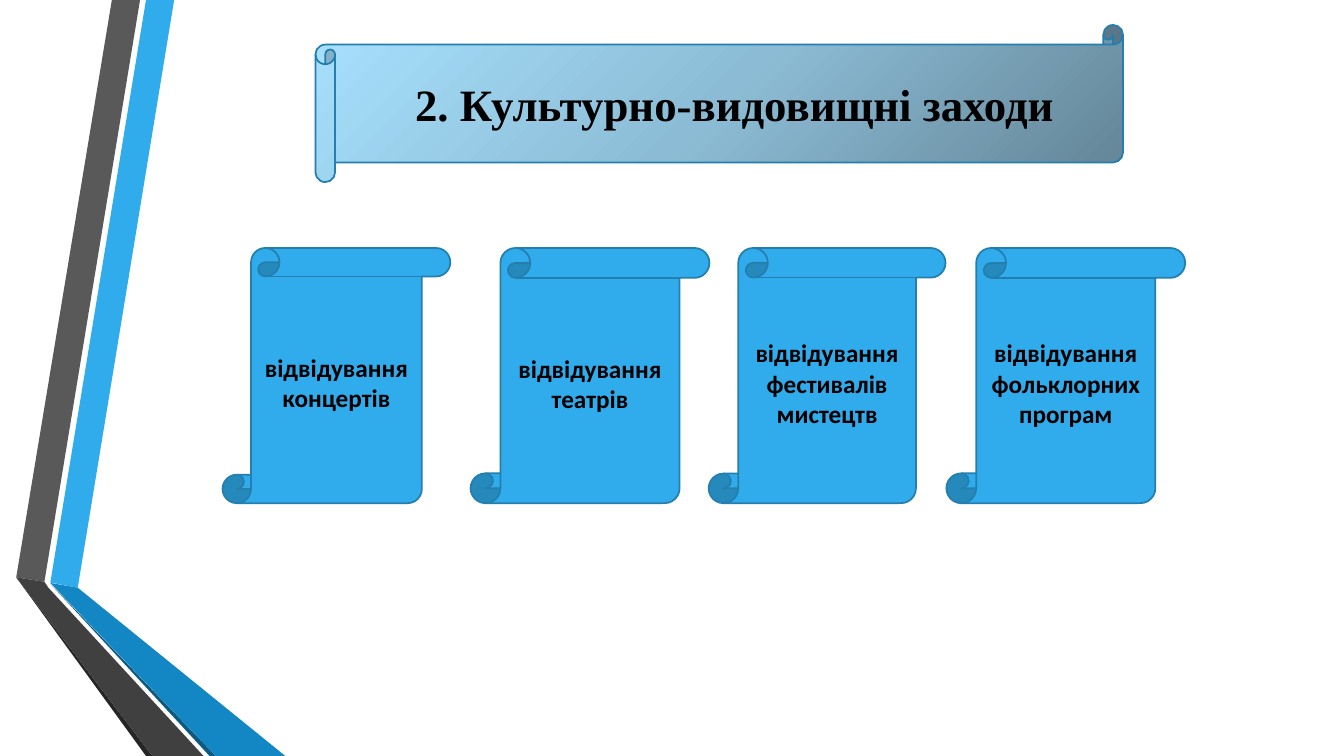
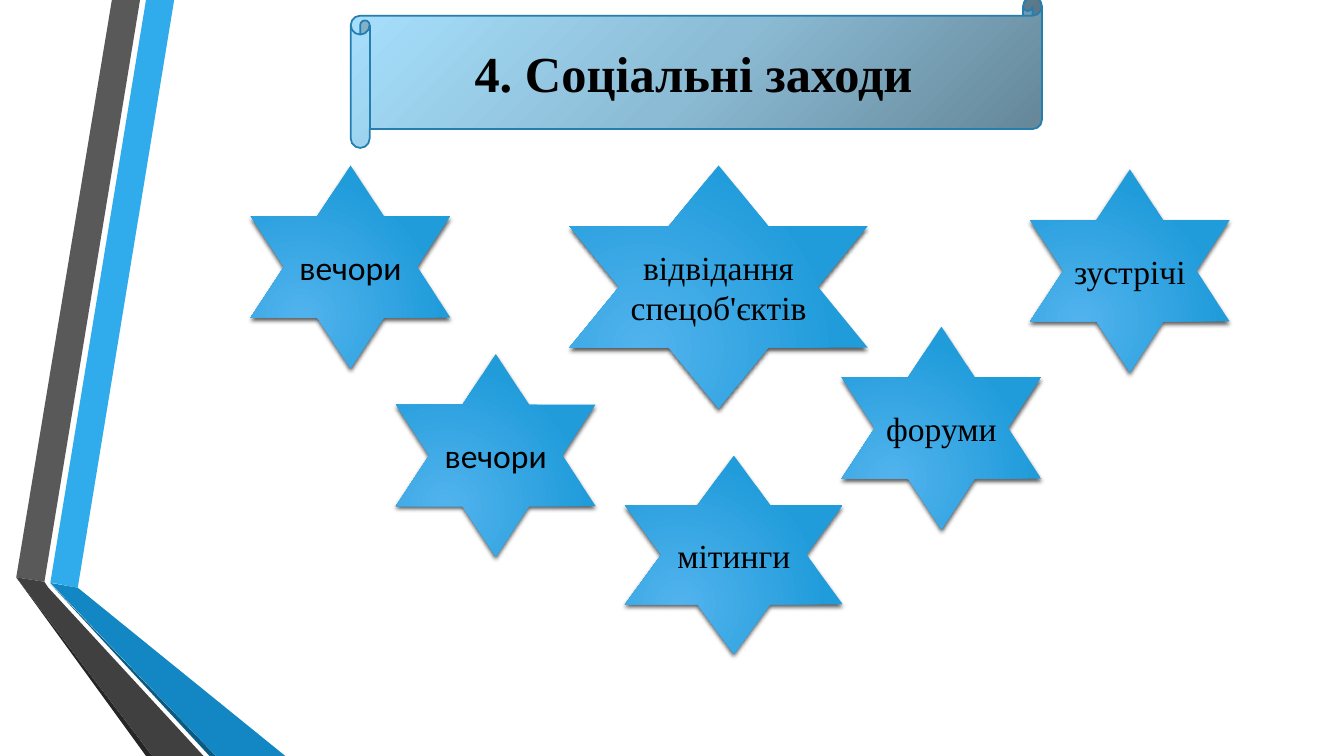
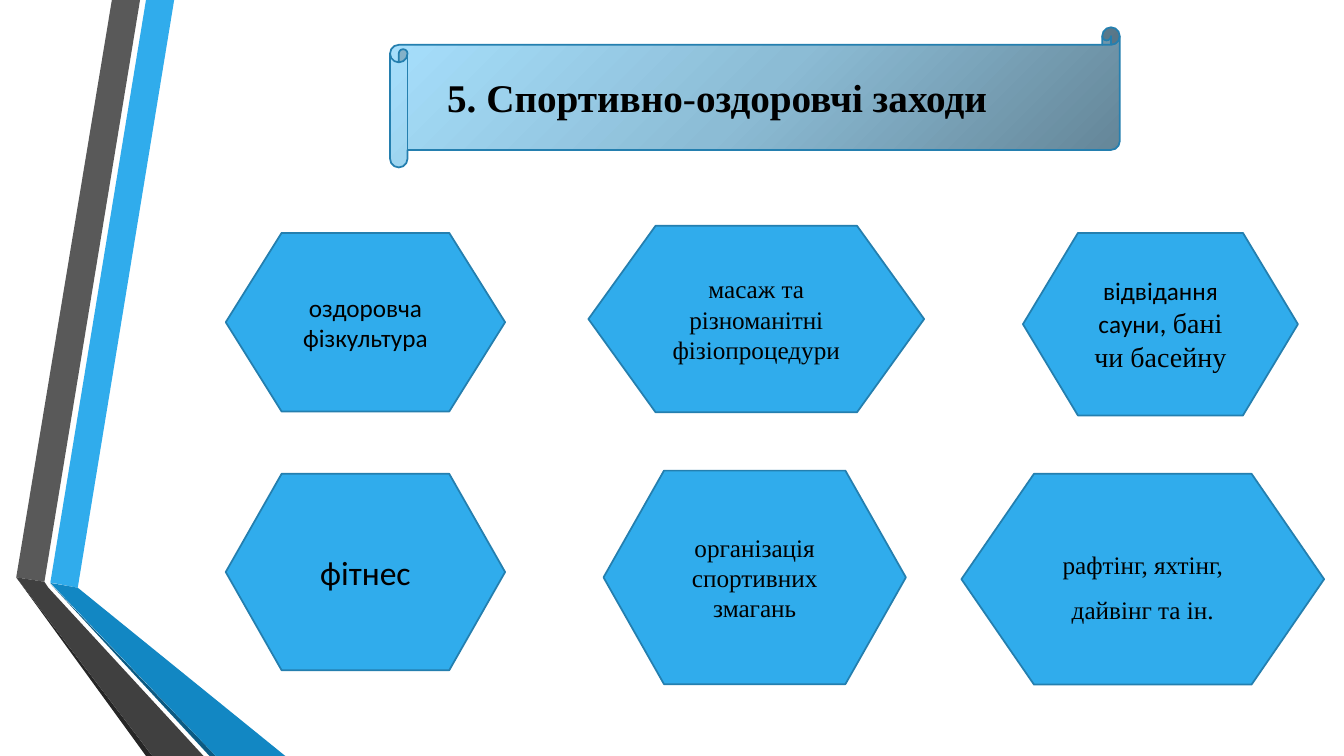
"""Builds three slides on cultural, social and sports activities."""
from pptx import Presentation
from pptx.dml.color import RGBColor
from pptx.enum import shapes, text
from pptx.oxml import ns, parse_xml
from pptx.util import Cm, Pt

BLACK = RGBColor(0x00, 0x00, 0x00)
BLUE = RGBColor(0x30, 0xAC, 0xEC)
OUTLINE = RGBColor(0x24, 0x7F, 0xAF)
TITLE_STOPS = (
    (0, RGBColor(0x63, 0x84, 0x96)),
    (50, RGBColor(0x8C, 0xBC, 0xD5)),
    (100, RGBColor(0xA7, 0xE0, 0xFD)),
)
STAR_STOPS = ((0, RGBColor(0x51, 0xB3, 0xED)), (100, RGBColor(0x21, 0x9C, 0xDB)))
LINEAR = '<a:lin ang="13500000" scaled="0"/>'
RADIAL = (
    '<a:path path="circle"><a:fillToRect l="50000" t="100000" '
    'r="100000" b="50000"/></a:path>'
)
SHADOW = (
    f'<a:outerShdw {ns.nsdecls("a")} blurRad="38100" dist="25400" dir="5400000" '
    'rotWithShape="0"><a:srgbClr val="000000"><a:alpha val="64000"/></a:srgbClr>'
    '</a:outerShdw>'
)
SANS = "Calibri"
SERIF = "Times New Roman"
SCROLL = shapes.MSO_SHAPE.VERTICAL_SCROLL
STAR = shapes.MSO_SHAPE.STAR_6_POINT
HEXAGON = shapes.MSO_SHAPE.FLOWCHART_PREPARATION

RIBBONS = (
    (BLUE, ((1.27, 14.68), (1.96, 14.81), (4.39, 0), (3.68, 0))),
    (RGBColor(0x59, 0x59, 0x59),
     ((3.53, 0), (2.82, 0), (0.41, 14.55), (1.12, 14.66))),
    (RGBColor(0x26, 0x26, 0x26), ((0.41, 14.55), (3.68, 19.05), (3.84, 19.05))),
    (RGBColor(0x0C, 0x5A, 0x82), ((1.27, 14.71), (5.28, 19.05), (5.44, 19.05))),
    (RGBColor(0x12, 0x87, 0xC3),
     ((1.27, 14.69), (5.44, 19.05), (7.19, 19.05), (1.96, 14.81))),
    (RGBColor(0x40, 0x40, 0x40),
     ((5.13, 19.05), (1.22, 14.81), (1.12, 14.66), (0.41, 14.55), (3.84, 19.05))),
)

CULTURE_SCROLLS = (
    (5.61, 5.74, "відвідування концертів"),
    (11.86, 6.02, "відвідування театрів"),
    (17.86, 5.97, "відвідування фестивалів мистецтв"),
    (23.85, 6.02, "відвідування фольклорних програм"),
)
STAR_SIZE = (5.03, 5.11)
SOCIAL_STARS = (
    ((6.32, 4.17, *STAR_SIZE), "вечори", SANS),
    ((9.98, 8.92, *STAR_SIZE), "вечори", SANS),
    ((14.35, 4.17, 7.52, 6.12), "відвідання спецоб'єктів", SERIF),
    ((15.75, 11.48, 5.49, 5), "мітинги", SERIF),
    ((21.21, 8.23, *STAR_SIZE), "форуми", SERIF),
    ((25.96, 4.27, *STAR_SIZE), "зустрічі", SERIF),
)
SPORT_HEXAGONS = (
    ((5.69, 5.87, 7.04, 4.5), [("оздоровча фізкультура", 18, SANS, False)], 1),
    ((14.83, 5.69, 8.46, 4.7),
     [("масаж та різноманітні фізіопроцедури", 18, SERIF, False)], 1),
    ((25.78, 5.87, 6.93, 4.6),
     [("відвідання сауни", 18, SANS, False), (", ", 20, SANS, False),
      ("бані чи басейну", 20, SERIF, False)], 1),
    ((15.21, 11.86, 7.62, 5.38),
     [("організація спортивних змагань", 18, SERIF, False)], 1),
    ((5.69, 11.94, 7.04, 4.95), [("фітнес", 24, SANS, False)], 1),
    ((24.23, 11.94, 9.14, 5.31),
     [("рафтінг, яхтінг, дайвінг та ін.", 18, SERIF, False)], 1.5),
)


def write_runs(paragraph, runs):
    """Add runs given as (words, size, font, bold)."""
    for words, size, font, bold in runs:
        run = paragraph.add_run()
        run.text = words
        run.font.size = Pt(size)
        run.font.name = font
        run.font.bold = bold
        run.font.color.rgb = BLACK


def fill_solid(shape, color):
    """Give the shape a plain fill."""
    shape.fill.solid()
    shape.fill.fore_color.rgb = color


def fill_gradient(shape, stops, direction):
    """Give the shape a gradient fill."""
    shape.fill.background()
    stop_xml = "".join(
        f'<a:gs pos="{position * 1000}"><a:srgbClr val="{color}"/></a:gs>'
        for position, color in stops
    )
    properties = shape.element.spPr
    properties.replace(
        properties.find(ns.qn("a:noFill")),
        parse_xml(
            f'<a:gradFill {ns.nsdecls("a")} rotWithShape="1">'
            f"<a:gsLst>{stop_xml}</a:gsLst>{direction}</a:gradFill>"
        ),
    )


def add_outlined(slide, kind, box):
    """Add a blue shape with a thin darker outline."""
    shape = slide.shapes.add_shape(kind, *map(Cm, box))
    shape.shadow.inherit = False
    fill_solid(shape, BLUE)
    shape.line.color.rgb = OUTLINE
    shape.line.width = Pt(1.25)
    return shape


def add_label(shape, runs, spacing=1):
    """Centre a label in the shape."""
    frame = shape.text_frame
    frame.word_wrap = True
    frame.vertical_anchor = text.MSO_ANCHOR.MIDDLE
    paragraph = frame.paragraphs[0]
    paragraph.alignment = text.PP_ALIGN.CENTER
    paragraph.line_spacing = spacing
    write_runs(paragraph, runs)


def add_star(slide, box, words, font):
    """Add a shaded star with a label."""
    star = slide.shapes.add_shape(STAR, *map(Cm, box))
    fill_gradient(star, STAR_STOPS, RADIAL)
    star.line.fill.background()
    star.shadow.inherit = False
    star.element.spPr.find(ns.qn("a:effectLst")).append(parse_xml(SHADOW))
    add_label(star, [(words, 24, font, False)])


def add_title(slide, scroll_box, text_box, runs):
    """Add the title on its horizontal scroll."""
    scroll = add_outlined(slide, shapes.MSO_SHAPE.HORIZONTAL_SCROLL, scroll_box)
    fill_gradient(scroll, TITLE_STOPS, LINEAR)
    frame = slide.shapes.add_textbox(*map(Cm, text_box)).text_frame
    frame.word_wrap = False
    frame.auto_size = text.MSO_AUTO_SIZE.SHAPE_TO_FIT_TEXT
    write_runs(frame.paragraphs[0], [(*run, SERIF, bold) for *run, bold in runs])


def add_ribbons(presentation, slide):
    """Draw the folded ribbons and move them to the slide master."""
    group = slide.shapes.add_group_shape()
    for color, points in RIBBONS:
        start, *others = [(Cm(x), Cm(y)) for x, y in points]
        builder = group.shapes.build_freeform(*start)
        builder.add_line_segments(others, close=True)
        ribbon = builder.convert_to_shape()
        fill_solid(ribbon, color)
        ribbon.line.fill.background()
        ribbon.shadow.inherit = False
    tree = presentation.slide_master.element.cSld.spTree
    tree.append(group.element)
    for number, properties in enumerate(tree.iter(ns.qn("p:cNvPr")), 1):
        properties.set("id", str(number))


def build_culture(slide):
    """Fill the slide on cultural events."""
    add_title(slide, (7.95, 0.63, 20.35, 3.96), (10.21, 1.8, 16.76, 1.63),
              [("2. Культурно-видовищні заходи", 32, True)])
    for left, width, words in CULTURE_SCROLLS:
        scroll = add_outlined(slide, SCROLL, (left, 6.25, width, 6.43))
        add_label(scroll, [(words, 18, SANS, True)])


def build_social(slide):
    """Fill the slide on social events."""
    add_title(slide, (8.84, -0.08, 17.42, 3.81), (11.71, 0.94, 11.66, 1.8),
              [("4. Соціальні заходи", 36, True)])
    for box, words, font in SOCIAL_STARS:
        add_star(slide, box, words, font)


def build_sport(slide):
    """Fill the slide on sports and health."""
    add_title(slide, (9.83, 0.69, 18.39, 3.53), (11.02, 1.73, 14.27, 1.45),
              [("5. Спортивно", 28, True), ("-", 28, False),
               ("оздоровчі заходи", 28, True)])
    for box, runs, spacing in SPORT_HEXAGONS:
        add_label(add_outlined(slide, HEXAGON, box), runs, spacing)


def main():
    """Build and save the presentation."""
    presentation = Presentation()
    presentation.slide_width = Cm(33.87)
    presentation.slide_height = Cm(19.05)
    blank = presentation.slide_layouts[6]
    slides = [presentation.slides.add_slide(blank) for _ in range(3)]
    add_ribbons(presentation, slides[0])
    for build, slide in zip((build_culture, build_social, build_sport), slides):
        build(slide)
    presentation.save("out.pptx")


if __name__ == "__main__":
    main()
